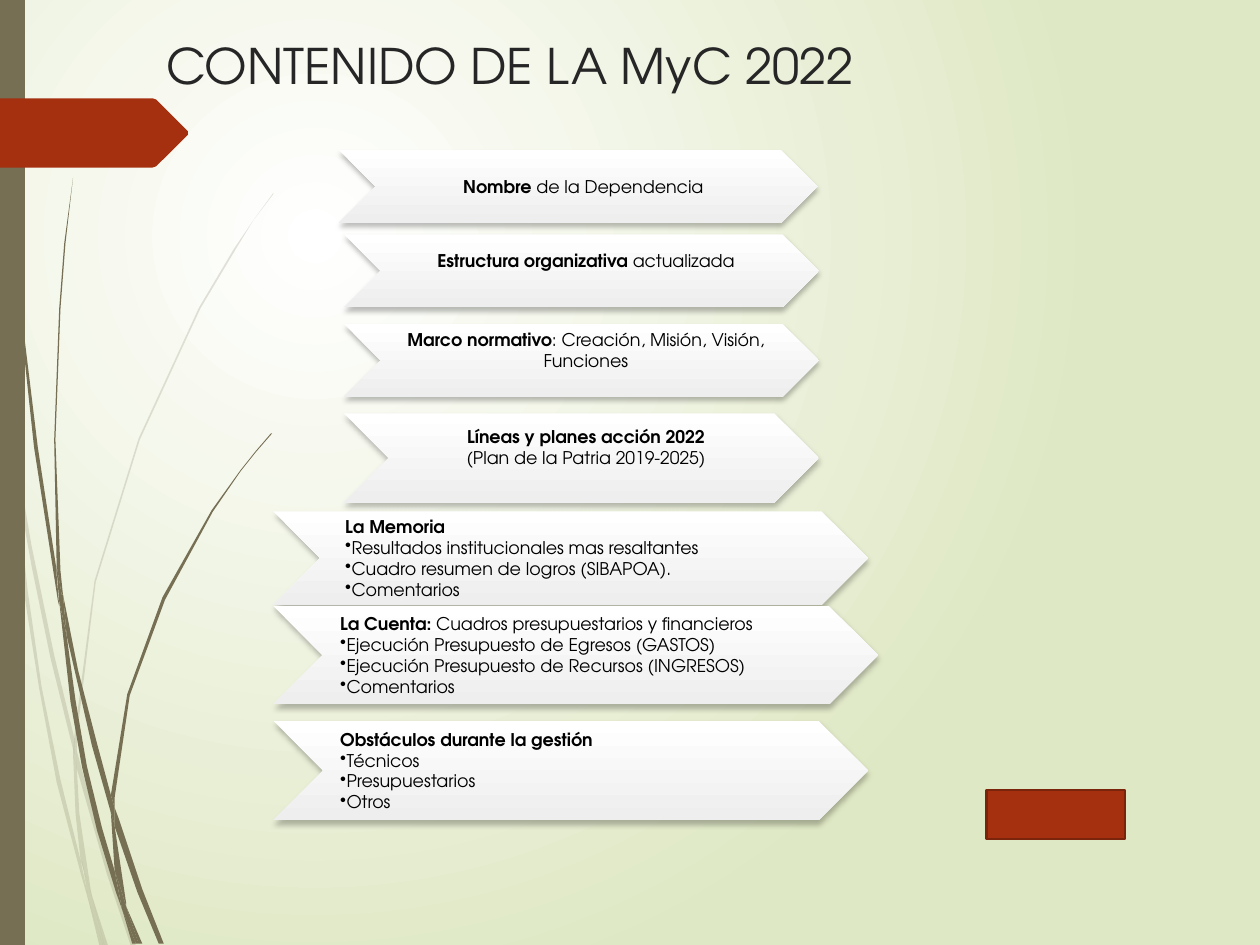
from lxml import etree
from pptx import Presentation
from pptx.dml.color import RGBColor
from pptx.enum.shapes import MSO_SHAPE
from pptx.enum.text import MSO_ANCHOR, PP_ALIGN
from pptx.oxml.ns import qn
from pptx.util import Inches, Pt

CHEVRON, RECTANGLE = MSO_SHAPE.CHEVRON, MSO_SHAPE.RECTANGLE
TOP, MIDDLE = MSO_ANCHOR.TOP, MSO_ANCHOR.MIDDLE
LEFT, CENTER = PP_ALIGN.LEFT, PP_ALIGN.CENTER
FONT = "TeX Gyre Adventor"
OLIVE, RUST = "766F54", "A53010"


def rgb(color):
    return RGBColor.from_string(color)


def outline(points, color):
    corners = [(Inches(x), Inches(y)) for x, y in points]
    builder = slide.shapes.build_freeform(*corners[0], scale=1.0)
    builder.add_line_segments(corners[1:], close=True)
    shape = builder.convert_to_shape()
    shape.shadow.inherit = False
    shape.fill.solid()
    shape.fill.fore_color.rgb = rgb(color)
    shape.line.fill.background()
    return shape


prs = Presentation()
prs.slide_width, prs.slide_height = Inches(10), Inches(7.5)
slide = prs.slides.add_slide(prs.slide_layouts[6])

backdrop = slide.background.fill
backdrop.gradient()
for stop, color in zip(backdrop.gradient_stops, ("FFFFFF", "DFE8C4")):
    stop.color.rgb = rgb(color)
gradient = slide.element.find(".//" + qn("a:gradFill"))
linear = gradient.find(qn("a:lin"))
radial = etree.Element(qn("a:path"), {"path": "circle"})
etree.SubElement(radial, qn("a:fillToRect"), l="50000", t="50000", r="100000", b="100000")
gradient.replace(linear, radial)

pale_blades = [
    [(0.08, 3.5), (0.06, 3.22), (0, 2.82), (0, 2.99), (0.07, 3.44)],
    [(0.4, 5.22), (0.59, 5.99), (0.59, 5.86), (0.43, 5.2), (0.25, 4.33), (0.1, 3.45),
     (0.12, 3.76), (0.25, 4.49)],
    [(0.64, 6.07), (0.61, 5.96), (0.61, 6.1), (0.85, 6.94), (1.04, 7.51), (1.08, 7.51),
     (0.88, 6.92)],
    [(0.83, 7.51), (0.86, 7.51), (0.73, 7.11)],
    [(0.64, 6.83), (0.48, 6.19), (0.33, 5.45), (0.22, 4.69), (0.12, 3.76), (0.08, 3.5),
     (0.12, 4.1), (0.19, 4.7), (0.31, 5.46), (0.45, 6.21), (0.64, 6.93), (0.7, 7.14),
     (0.69, 7.07)],
    [(0.58, 5.99), (0.6, 6.46), (0.64, 6.83), (0.67, 6.92), (0.73, 7.11), (0.72, 7.06),
     (0.63, 6.46), (0.61, 6.1), (0.61, 6.08)],
    [(0.61, 5.84), (0.76, 4.62), (1.11, 3.49), (1.59, 2.45), (1.87, 1.98), (2.01, 1.75),
     (2.17, 1.54), (2.17, 1.53), (2.01, 1.75), (1.86, 1.97), (1.58, 2.44), (1.1, 3.48),
     (0.75, 4.61), (0.59, 5.84), (0.59, 5.86), (0.61, 5.96)],
    [(0.7, 7.14), (0.79, 7.51), (0.82, 7.51)],
    [(0.61, 6.08), (0.61, 6.1), (0.61, 5.96), (0.59, 5.86), (0.58, 5.99)],
    [(0.67, 6.92), (0.65, 6.83), (0.69, 7.07), (0.7, 7.14), (0.82, 7.51), (0.83, 7.51),
     (0.73, 7.11)],
]
dark_blades = [
    [(0.05, 1.1), (0.14, 2.33), (0.27, 3.55), (0.46, 4.77), (0.47, 4.81), (0.45, 4.57),
     (0.45, 4.53), (0.3, 3.55), (0.15, 2.32), (0.06, 1.09), (0.04, 0.48), (0.03, 0),
     (0.02, 0), (0.03, 0.48)],
    [(0.73, 5.92), (0.88, 6.45), (0.88, 6.31), (0.77, 5.9), (0.62, 5.32), (0.5, 4.72),
     (0.53, 5.05)],
    [(0.94, 6.49), (0.91, 6.41), (0.91, 6.56), (1.09, 7.08), (1.26, 7.49), (1.3, 7.49),
     (1.13, 7.06)],
    [(0.91, 6.91), (0.81, 6.57), (0.69, 6.08), (0.6, 5.56), (0.53, 5.05), (0.47, 4.77),
     (0.56, 5.57), (0.65, 6.08), (0.77, 6.59), (0.92, 7.08), (0.97, 7.22), (0.96, 7.17)],
    [(0.5, 4.72), (0.48, 4.53), (0.44, 3.49), (0.48, 2.45), (0.52, 1.93), (0.58, 1.41),
     (0.51, 1.93), (0.47, 2.45), (0.43, 3.49), (0.45, 4.49), (0.49, 4.72)],
    [(1.1, 7.49), (1.13, 7.49), (1, 7.19)],
    [(0.47, 4.77), (0.53, 5.05), (0.5, 4.72), (0.49, 4.72), (0.45, 4.49), (0.45, 4.53)],
    [(0.91, 6.33), (1.03, 5.52), (1.31, 4.76), (1.69, 4.06), (1.91, 3.74), (2.03, 3.59),
     (2.16, 3.44), (2.15, 3.44), (2.03, 3.58), (1.91, 3.73), (1.68, 4.05), (1.29, 4.74),
     (1.01, 5.51), (0.88, 6.31), (0.91, 6.41)],
    [(0.97, 7.22), (1.05, 7.49), (1.08, 7.49)],
    [(0.88, 6.45), (0.91, 6.91), (0.96, 7.06), (1, 7.19), (1, 7.16), (0.91, 6.56),
     (0.9, 6.51)],
    [(0.88, 6.45), (0.9, 6.51), (0.91, 6.56), (0.91, 6.41), (0.88, 6.31)],
    [(0.96, 7.06), (0.91, 6.91), (0.96, 7.17), (0.97, 7.22), (1.08, 7.49), (1.1, 7.49),
     (1, 7.19)],
]
for points in pale_blades:
    blade = outline(points, OLIVE)
    tint = blade.element.spPr.find(qn("a:solidFill"))[0]
    etree.SubElement(tint, qn("a:alpha"), val="20000")
for points in dark_blades:
    outline(points, OLIVE)

outline([(0, 0), (0.2, 0), (0.2, 7.5), (0, 7.5)], OLIVE)
outline([(1.49, 1.07), (1.24, 1.32), (1.21, 1.33), (0, 1.33), (0, 0.78), (1.21, 0.78),
         (1.24, 0.79), (1.49, 1.04)], RUST)

heading = slide.shapes.add_textbox(Inches(1.22), Inches(0.23), Inches(8.95), Inches(0.71))
heading.text_frame.word_wrap = True
heading.text_frame.vertical_anchor = TOP
heading.text_frame.text = "CONTENIDO DE LA MyC 2022"
heading_font = heading.text_frame.paragraphs[0].runs[0].font
heading_font.name, heading_font.size = FONT, Pt(28)
heading_font.color.rgb = rgb("262626")

# left, top, width, height | text left, text width | alignment, bottom inset | title, rest, lines
sections = [
    ((2.69, 1.19, 3.8, 0.58), (3.01, 3.23), CENTER, 0.01,
     "Nombre", " de la Dependencia", []),
    ((2.73, 1.86, 3.77, 0.58), (3.04, 3.21), CENTER, 0.18,
     "Estructura organizativa", " actualizada", []),
    ((2.73, 2.57, 3.77, 0.58), (3.04, 3.21), CENTER, 0.18,
     "Marco normativo", ": Creación, Misión, Visión, Funciones", []),
    ((2.73, 3.28, 3.77, 0.71), (3.04, 3.21), CENTER, 0.18,
     "Líneas y planes acción 2022", "", ["(Plan de la Patria 2019-2025)"]),
    ((2.17, 4.06, 4.72, 0.74), (2.73, 3.85), LEFT, 0.01, "La Memoria", "",
     ["Resultados institucionales mas resaltantes",
      "Cuadro resumen de logros (SIBAPOA).", "Comentarios"]),
    ((2.17, 4.81, 4.8, 0.78), (2.69, 3.95), LEFT, 0.01,
     "La Cuenta:", " Cuadros presupuestarios y financieros",
     ["Ejecución Presupuesto de Egresos (GASTOS)",
      "Ejecución Presupuesto de Recursos (INGRESOS)", "Comentarios"]),
    ((2.17, 5.72, 4.72, 0.79), (2.69, 3.88), LEFT, 0.01,
     "Obstáculos durante la gestión", "", ["Técnicos", "Presupuestarios", "Otros"]),
]
for bounds, (text_left, text_width), alignment, bottom, title, rest, lines in sections:
    arrow = slide.shapes.add_shape(CHEVRON, *map(Inches, bounds))
    arrow.fill.gradient()
    arrow.fill.gradient_angle = 270
    for stop, color in zip(arrow.fill.gradient_stops, ("FFFFFF", "EEEEEE")):
        stop.color.rgb = rgb(color)
    arrow.line.fill.background()
    arrow.shadow.inherit = False
    effects = arrow.element.spPr.find(qn("a:effectLst"))
    shade = etree.SubElement(effects, qn("a:outerShdw"), blurRad=str(Pt(3)), dist=str(Pt(2)),
                             dir="5400000", algn="ctr", rotWithShape="0")
    black = etree.SubElement(shade, qn("a:srgbClr"), val="000000")
    etree.SubElement(black, qn("a:alpha"), val="25000")

    label = slide.shapes.add_textbox(Inches(text_left), Inches(bounds[1]),
                                     Inches(text_width), Inches(bounds[3]))
    frame = label.text_frame
    frame.word_wrap = True
    frame.vertical_anchor = MIDDLE
    frame.margin_left = frame.margin_top = Inches(0.01)
    frame.margin_right, frame.margin_bottom = 0, Inches(bottom)
    frame.text = "\n".join([title, *lines])
    if rest:
        frame.paragraphs[0].add_run().text = rest
    for index, paragraph in enumerate(frame.paragraphs):
        paragraph.alignment = alignment
        paragraph.line_spacing = Pt(12)
        if index and alignment == LEFT:
            paragraph.level = 1
            properties = paragraph._p.get_or_add_pPr()
            properties.set("marL", str(Inches(0.05)))
            properties.set("indent", str(Inches(-0.05)))
            etree.SubElement(properties, qn("a:buChar"), char="•")
        for run in paragraph.runs:
            run.font.name, run.font.size = FONT, Pt(10)
            run.font.bold = run.text == title
            run.font.color.rgb = rgb("000000")

button = slide.shapes.add_shape(RECTANGLE, Inches(7.83), Inches(6.27), Inches(1.1), Inches(0.39))
button.shadow.inherit = False
button.fill.solid()
button.fill.fore_color.rgb = rgb(RUST)
button.line.color.rgb = rgb("7A240C")
button.line.width = Pt(1.25)

prs.save("out.pptx")
